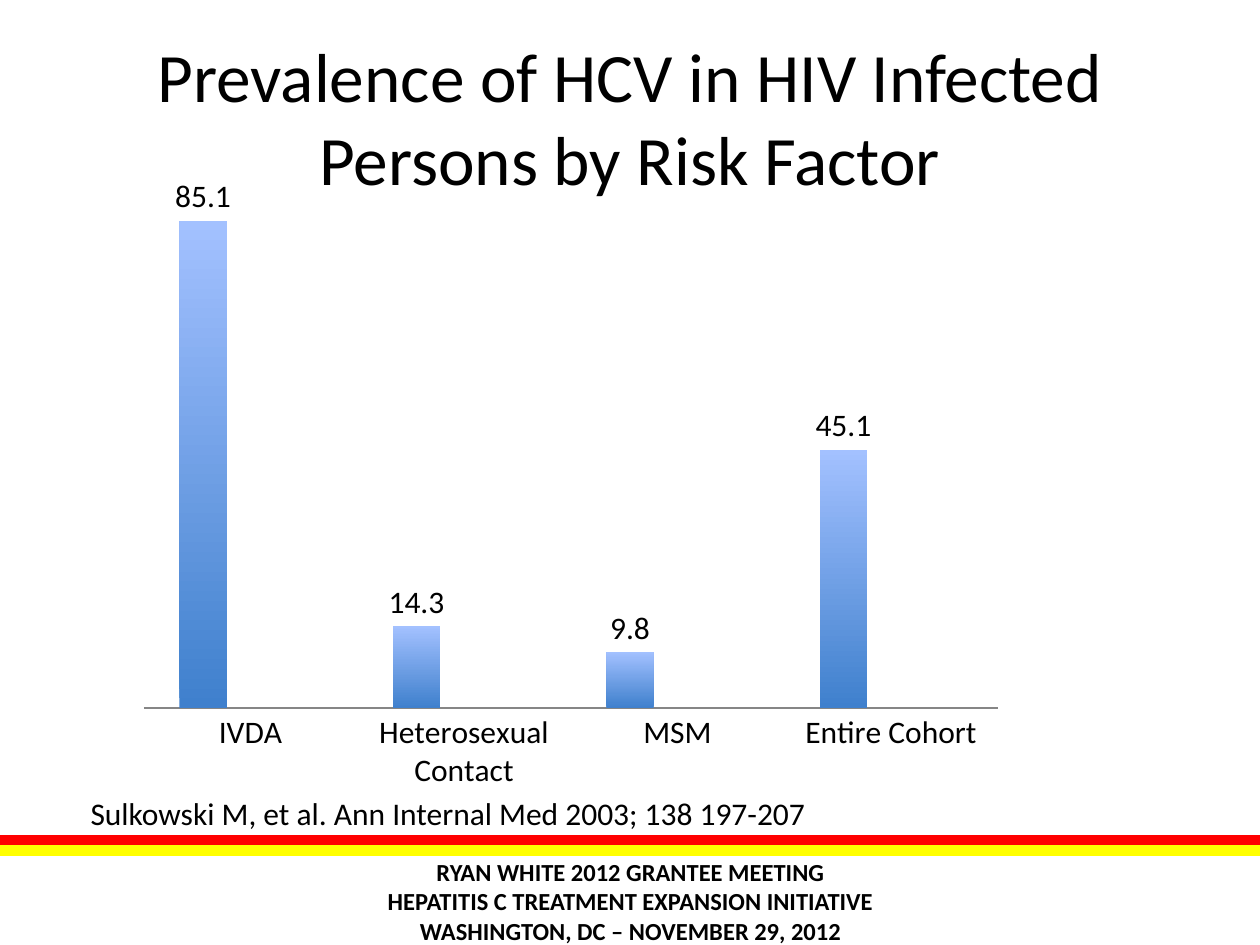
from lxml.etree import SubElement
from pptx import Presentation
from pptx.chart.data import CategoryChartData
from pptx.dml.color import RGBColor
from pptx.enum.chart import XL_CHART_TYPE, XL_LABEL_POSITION, XL_TICK_MARK
from pptx.enum.shapes import MSO_CONNECTOR
from pptx.enum.text import MSO_ANCHOR, MSO_AUTO_SIZE, PP_ALIGN
from pptx.oxml import parse_xml
from pptx.oxml.ns import nsdecls, qn
from pptx.util import Inches, Pt

WIDTH, HEIGHT = 10, 7.5
FONT = "Calibri"
CATEGORIES = ["IVDA", "Heterosexual Contact", "MSM", "Entire Cohort"]
PREVALENCE = [85.1, 14.3, 9.8, 45.1]
MEETING = [
    "RYAN WHITE 2012 GRANTEE MEETING",
    "HEPATITIS C TREATMENT EXPANSION INITIATIVE",
    "WASHINGTON, DC – NOVEMBER 29, 2012",
]


def color(value):
    return RGBColor.from_string(value)


def format_font(font, size, bold=False):
    font.name = FONT
    font.size = Pt(size)
    font.bold = bold
    font.color.rgb = color("000000")


def write_text(shape, lines, size=18, bold=False, align=PP_ALIGN.LEFT, anchor=MSO_ANCHOR.TOP):
    frame = shape.text_frame
    frame.word_wrap = True
    frame.auto_size = MSO_AUTO_SIZE.NONE
    frame.vertical_anchor = anchor
    frame.text = "\n".join(lines)
    for paragraph in frame.paragraphs:
        paragraph.alignment = align
        format_font(paragraph.runs[0].font, size, bold)


def add_text(slide, box, lines, **text_format):
    shape = slide.shapes.add_textbox(*map(Inches, box))
    write_text(shape, lines, **text_format)


def add_title(slide, text):
    title = slide.shapes.title
    title.left, title.top, title.width, title.height = map(
        Inches, (0.05 * WIDTH, 0.04 * HEIGHT, 0.9 * WIDTH, HEIGHT / 6)
    )
    write_text(title, [text], size=39.6, align=PP_ALIGN.CENTER, anchor=MSO_ANCHOR.MIDDLE)
    element = title._element
    element.getparent().append(element)


def add_stripe(slide, top, line_color):
    stripe = slide.shapes.add_connector(
        MSO_CONNECTOR.STRAIGHT, 0, Inches(top), Inches(WIDTH), Inches(top)
    )
    stripe.line.color.rgb = color(line_color)
    stripe.line.width = Pt(6)
    SubElement(stripe._element.spPr, qn("a:effectLst"))


def set_plot_layout(chart, **shares):
    plot_area = chart._chartSpace.chart.plotArea
    for layout in plot_area.findall(qn("c:layout")):
        plot_area.remove(layout)
    values = "".join(f'<c:{name} val="{share}"/>' for name, share in shares.items())
    plot_area.insert(0, parse_xml(
        f'<c:layout {nsdecls("c")}><c:manualLayout><c:layoutTarget val="inner"/>'
        f'<c:xMode val="edge"/><c:yMode val="edge"/>{values}</c:manualLayout></c:layout>'
    ))


def fill_gradient(fill, bottom, top):
    fill.gradient()
    fill.gradient_angle = 90
    for stop, value in zip(fill.gradient_stops, (bottom, top)):
        stop.color.rgb = color(value)


def add_prevalence_chart(slide, box):
    data = CategoryChartData()
    data.categories = CATEGORIES
    data.add_series("Series 1", PREVALENCE)
    for name in ("Series 2", "Series 3"):
        data.add_series(name, [None] * len(CATEGORIES))
    chart = slide.shapes.add_chart(
        XL_CHART_TYPE.COLUMN_CLUSTERED, *map(Inches, box), data
    ).chart
    chart.has_legend = False
    chart.has_title = False
    format_font(chart.font, 18)
    set_plot_layout(chart, x=0.02, y=0.02, w=0.96, h=0.83)

    value_axis = chart.value_axis
    value_axis.visible = False
    value_axis.has_major_gridlines = False
    value_axis.minimum_scale = 0
    value_axis.maximum_scale = 90
    category_axis = chart.category_axis
    category_axis.major_tick_mark = XL_TICK_MARK.NONE
    category_axis.format.line.color.rgb = color("868686")

    plot = chart.plots[0]
    plot.gap_width = 150
    plot.overlap = 0
    plot.vary_by_categories = False
    gradients = [("3F80CD", "A3C1FF"), ("CF3F3C", "FFA2A1"), ("9CC746", "DAFDA7")]
    for series, (bottom, top) in zip(plot.series, gradients):
        fill_gradient(series.format.fill, bottom, top)
        series.invert_if_negative = False
        labels = series.data_labels
        labels.show_value = True
        labels.position = XL_LABEL_POSITION.OUTSIDE_END
        format_font(labels.font, 18)


def main():
    presentation = Presentation()
    presentation.slide_width = Inches(WIDTH)
    presentation.slide_height = Inches(HEIGHT)
    slide = presentation.slides.add_slide(presentation.slide_layouts[5])
    add_text(slide, (-0.18, 0.9 * HEIGHT, 10.37, 0.81), MEETING,
             size=14, bold=True, align=PP_ALIGN.CENTER)
    add_stripe(slide, 6.67, "FF0000")
    add_stripe(slide, 6.75, "FFFF00")
    add_prevalence_chart(slide, (1, 1.41, 7.06, 4.95))
    add_text(slide, (0.62, 6.25, 6.29, 0.4),
             ["Sulkowski M, et al. Ann Internal Med 2003; 138 197-207"])
    add_title(slide, "Prevalence of HCV in HIV Infected Persons by Risk Factor")
    presentation.save("out.pptx")


if __name__ == "__main__":
    main()
